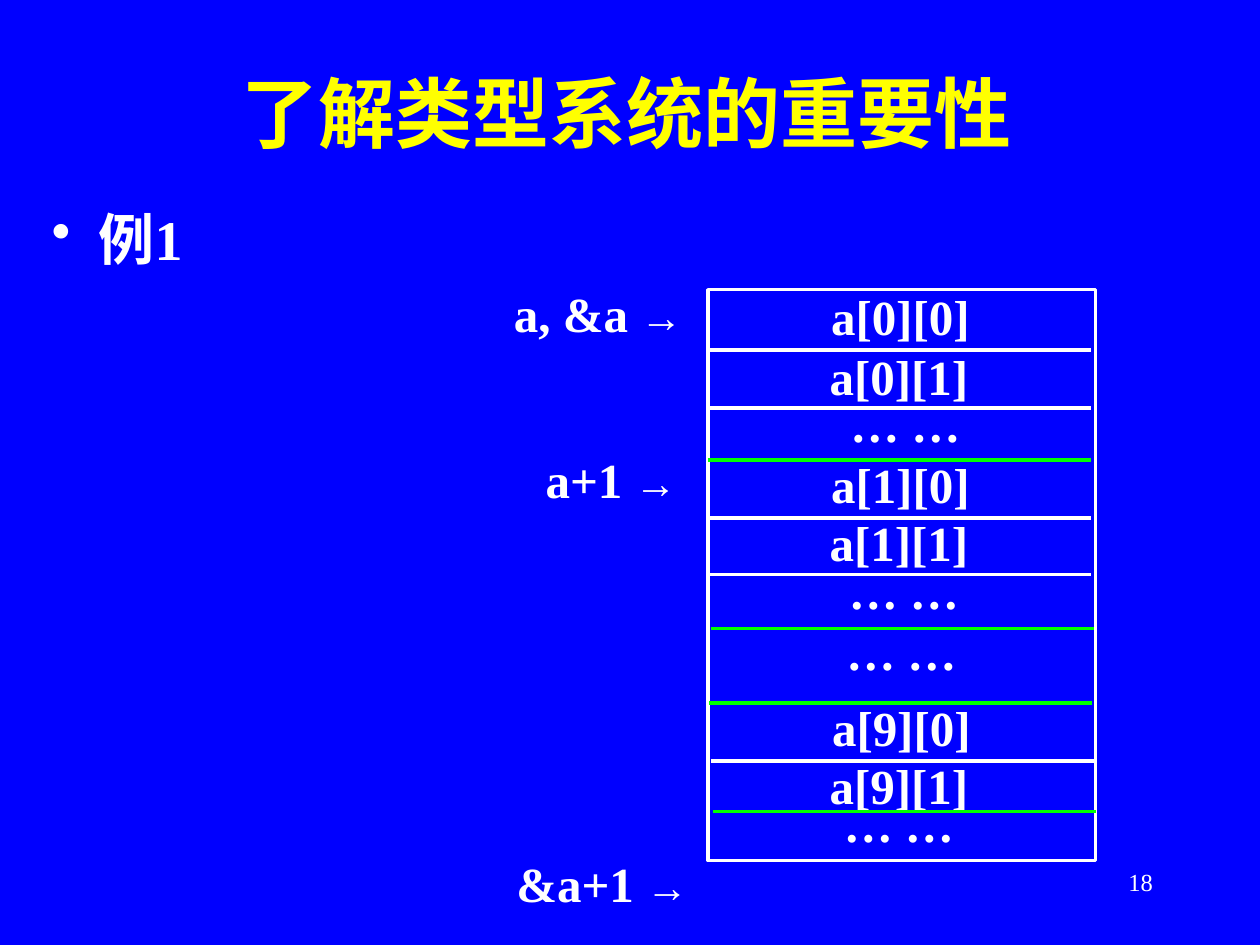
"""Build a slide showing the memory layout of a two-dimensional array."""
from lxml.etree import SubElement
from pptx import Presentation
from pptx.dml.color import RGBColor
from pptx.enum.shapes import MSO_CONNECTOR as Connector, MSO_SHAPE as Shape
from pptx.enum.text import MSO_ANCHOR as Anchor, PP_ALIGN as Align
from pptx.oxml.ns import qn
from pptx.util import Cm, Pt

BLUE = RGBColor(0x00, 0x00, 0xFF)
YELLOW = RGBColor(0xFF, 0xFF, 0x00)
WHITE = RGBColor(0xFF, 0xFF, 0xFF)
GREEN = RGBColor(0x00, 0xFF, 0x00)
FONT = "Times New Roman"

TITLE = "了解类型系统的重要性"
EXAMPLE = "例1"
PAGE_NUMBER = "18"
GAP = "… …"
ARROW = "→"

CELLS = [
    ("a[0][0]", 14.43, 5.54),
    ("a[0][1]", 14.4, 6.76),
    (GAP, 14.53, 7.7),
    ("a[1][0]", 14.43, 8.94),
    ("a[1][1]", 14.4, 10.11),
    (GAP, 14.5, 11.07),
    (GAP, 14.45, 12.29),
    ("a[9][0]", 14.45, 13.84),
    ("a[9][1]", 14.4, 15.01),
    (GAP, 14.4, 15.77),
]
DIVIDERS = [
    (14.27, 7.06, WHITE),
    (14.27, 8.23, WHITE),
    (14.27, 9.27, GREEN),
    (14.27, 10.44, WHITE),
    (14.27, 11.58, WHITE),
    (14.33, 12.67, GREEN),
    (14.3, 14.17, GREEN),
    (14.33, 15.34, WHITE),
    (14.38, 16.36, GREEN),
]
POINTERS = [("a, &a ", 10.11, 5.59), ("a+1 ", 10.75, 8.94), ("&a+1 ", 10.16, 17.07)]
DIVIDER_WIDTH = 7.72


def add_text(slide, text, box, size=28, color=WHITE, bold=True, align=Align.LEFT,
             anchor=Anchor.TOP, top_inset=0.13, bullet_indent=None, tail=None):
    """Add a text box; tail is an optional (text, size) run after the text."""
    shape = slide.shapes.add_textbox(*map(Cm, box))
    frame = shape.text_frame
    frame.word_wrap = True
    frame.vertical_anchor = anchor
    frame.margin_top = Cm(top_inset)
    paragraph = frame.paragraphs[0]
    paragraph.alignment = align
    if bullet_indent:
        properties = paragraph._p.get_or_add_pPr()
        properties.set("marL", str(Cm(bullet_indent)))
        properties.set("indent", str(-Cm(bullet_indent)))
        SubElement(properties, qn("a:buChar"), char="•")
    for run_text, run_size in [(text, size)] + ([tail] if tail else []):
        run = paragraph.add_run()
        run.text = run_text
        run.font.name = FONT
        run.font.size = Pt(run_size)
        run.font.bold = bold
        run.font.color.rgb = color


def add_divider(slide, left, top, color):
    """Add one horizontal line between array cells."""
    line = slide.shapes.add_connector(
        Connector.STRAIGHT, Cm(left), Cm(top), Cm(left + DIVIDER_WIDTH), Cm(top))
    line.line.color.rgb = color
    line.line.width = Pt(2)
    SubElement(line._element.spPr, qn("a:effectLst"))


def main():
    """Assemble and save the slide."""
    presentation = Presentation()
    presentation.slide_width, presentation.slide_height = Cm(25.4), Cm(19.05)
    slide = presentation.slides.add_slide(presentation.slide_layouts[6])
    slide.background.fill.solid()
    slide.background.fill.fore_color.rgb = BLUE

    add_text(slide, TITLE, (0.64, 0.64, 24, 3.2), size=44, color=YELLOW,
             align=Align.CENTER, anchor=Anchor.MIDDLE)
    add_text(slide, EXAMPLE, (0.79, 3.99, 24, 14), size=32, bullet_indent=0.95)
    add_text(slide, PAGE_NUMBER, (18.21, 17.35, 5.28, 1.27), size=14, bold=False,
             align=Align.RIGHT)

    array = slide.shapes.add_shape(Shape.RECTANGLE, Cm(14.27), Cm(5.84), Cm(7.82), Cm(11.51))
    array.shadow.inherit = False
    array.fill.background()
    array.line.color.rgb = WHITE
    array.line.width = Pt(2)

    for text, left, top in CELLS:
        add_text(slide, text, (left, top, 7.44, 1.58), align=Align.CENTER, top_inset=0.23)
    for left, top, color in DIVIDERS:
        add_divider(slide, left, top, color)
    for text, left, top in POINTERS:
        add_text(slide, text, (left, top, 4.19, 1.45), tail=(ARROW, 24))

    presentation.save("out.pptx")


if __name__ == "__main__":
    main()
